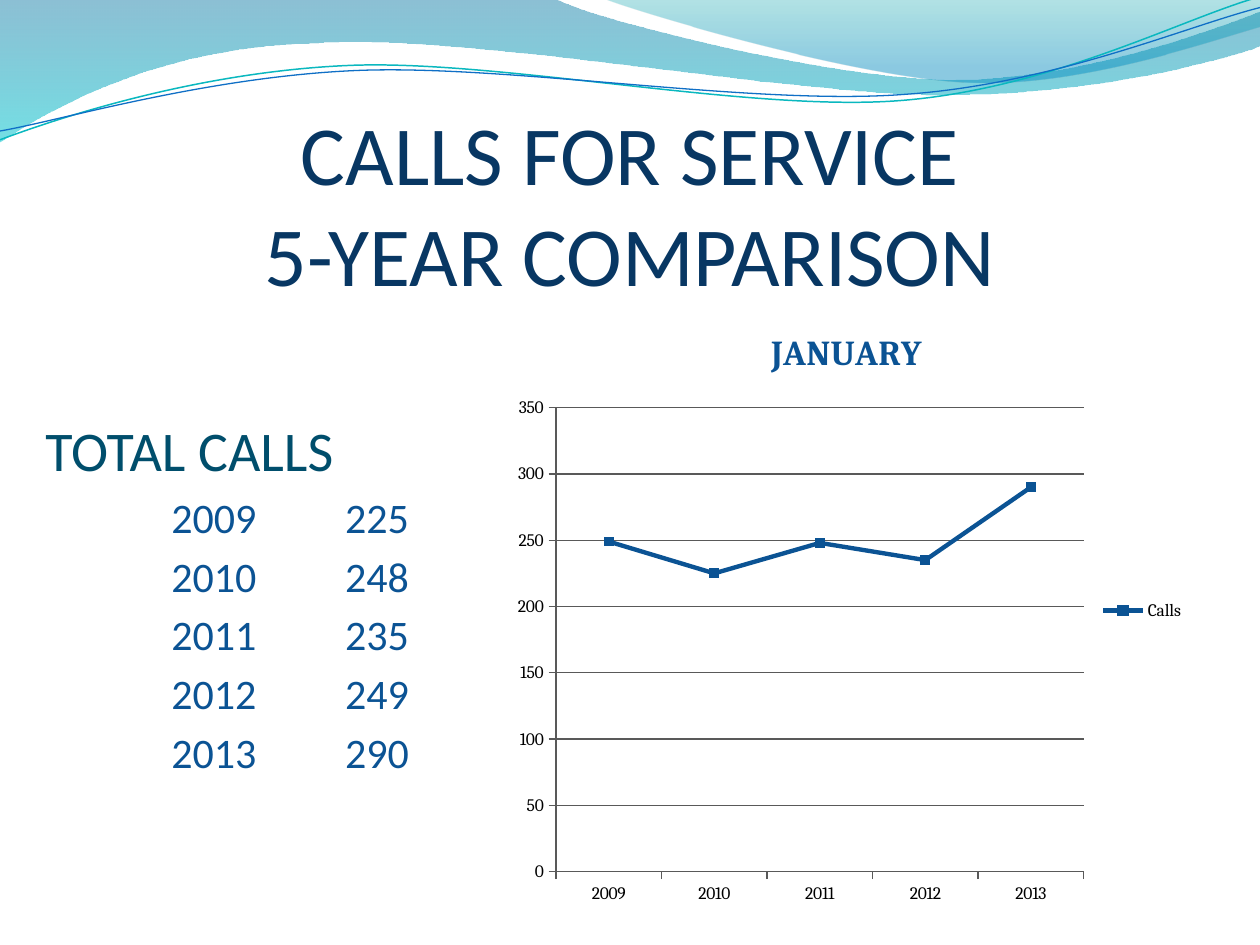
from lxml.etree import SubElement
from pptx import Presentation
from pptx.chart.data import CategoryChartData
from pptx.dml.color import RGBColor
from pptx.enum.chart import XL_CHART_TYPE, XL_LEGEND_POSITION, XL_MARKER_STYLE, XL_TICK_MARK
from pptx.enum.text import MSO_ANCHOR, MSO_AUTO_SIZE, PP_ALIGN
from pptx.oxml.ns import qn
from pptx.util import Inches, Pt

WIDTH, HEIGHT = 10, 7.5
NAVY, TEAL, BLUE, GRAY = "083763", "004E6C", "0B5394", "595959"
YEARS = ["2009", "2010", "2011", "2012", "2013"]
TOTALS = [225, 248, 235, 249, 290]
CHART_VALUES = [249, 225, 248, 235, 290]

BANDS = [
    ([[(0, 0)], [(4.4, -0.01)],
      [(4.76, 0.17), (6.64, 0.63), (7.58, 0.63)],
      [(8.53, 0.63), (9.58, 0.26), (10, 0.09)], [(10.01, 0.36)],
      [(9.83, 0.44), (8.7, 0.76), (7.46, 0.75)],
      [(6.22, 0.75), (3.82, 0.28), (2.57, 0.34)],
      [(1.29, 0.36), (0.46, 0.83), (-0.01, 1.13)]],
     [(0, "0074A1", 45), (1, "00C6CF", 55)]),
    ([[(4.79, -0.01)],
      [(5.09, 0.11), (6.82, 0.62), (7.69, 0.65)],
      [(8.56, 0.69), (9.61, 0.32), (10, 0.21)], [(10, 0)]],
     [(0, "00A1A9", 30), (0.8, "008BBF", 45)]),
]
RIBBONS = [
    ([[(0, 1.11)],
      [(0.48, 0.93), (1.58, 0.57), (2.77, 0.52)],
      [(3.95, 0.47), (5.93, 0.89), (7.13, 0.8)],
      [(8.33, 0.71), (9.38, 0.15), (9.98, -0.02)]], "0AB8BF", 0.85),
    ([[(0, 1.04)],
      [(0.47, 0.96), (1.64, 0.61), (2.83, 0.56)],
      [(4.03, 0.51), (5.97, 0.84), (7.17, 0.75)],
      [(8.36, 0.67), (9.41, 0.21), (10, 0.06)]], "0F6FC6", 0.75),
]


def color(value):
    """Turn a hex string into a colour."""
    return RGBColor.from_string(value)


def apply(target, values):
    """Set each attribute named in a dict of format values."""
    for name, value in values.items():
        setattr(target, name, value)


def format_font(font, size, value, name, bold=False):
    """Give a font its size, colour, face and weight."""
    apply(font, {"size": Pt(size), "name": name, "bold": bold})
    font.color.rgb = color(value)


def place(shape, box):
    """Move a shape to a box given in inches."""
    apply(shape, dict(zip(("left", "top", "width", "height"), map(Inches, box))))


def add_outline(slide, segments, close):
    """Draw a freeform whose three-point segments are cubic curves."""
    first, *rest = [tuple(map(Inches, segment[-1])) for segment in segments]
    builder = slide.shapes.build_freeform(*first, scale=1.0)
    builder.add_line_segments(rest, close=close)
    shape = builder.convert_to_shape()
    shape.shadow.inherit = False
    lines = list(shape._element.spPr.iter(qn("a:lnTo")))
    for line, segment in zip(lines, segments[1:]):
        if len(segment) == 3:
            curve = SubElement(line.getparent(), qn("a:cubicBezTo"))
            for x, y in segment:
                point = SubElement(curve, qn("a:pt"))
                point.set("x", str(Inches(x) - shape.left))
                point.set("y", str(Inches(y) - shape.top))
            line.getparent().replace(line, curve)
    return shape


def add_waves(slide):
    """Draw the translucent bands and thin ribbons along the top edge."""
    for segments, stops in BANDS:
        band = add_outline(slide, segments, True)
        band.fill.gradient()
        band.fill.gradient_angle = 270
        for stop, (position, value, _) in zip(band.fill.gradient_stops, stops):
            stop.position = position
            stop.color.rgb = color(value)
        for node, (_, _, alpha) in zip(band._element.spPr.iter(qn("a:srgbClr")), stops):
            SubElement(node, qn("a:alpha")).set("val", str(alpha * 1000))
        band.line.fill.background()
    for segments, value, width in RIBBONS:
        ribbon = add_outline(slide, segments, False)
        ribbon.fill.background()
        ribbon.line.color.rgb = color(value)
        ribbon.line.width = Pt(width)


def add_title(slide, box):
    """Fill the title placeholder with two centred lines."""
    title = slide.shapes.title
    place(title, box)
    frame = title.text_frame
    frame.text = "CALLS FOR SERVICE\v5-YEAR COMPARISON"
    apply(frame, {"vertical_anchor": MSO_ANCHOR.BOTTOM, "auto_size": MSO_AUTO_SIZE.NONE,
                  "word_wrap": True, "margin_left": 0, "margin_right": 0,
                  "margin_top": Inches(0.05), "margin_bottom": 0})
    paragraph = frame.paragraphs[0]
    paragraph.alignment = PP_ALIGN.CENTER
    for run in paragraph.runs:
        format_font(run.font, 48, NAVY, "Calibri")


def add_totals(slide, box):
    """List the yearly totals in tabbed columns under a heading."""
    frame = slide.shapes.add_textbox(*map(Inches, box)).text_frame
    apply(frame, {"word_wrap": True, "margin_left": Inches(0.53)})
    rows = [("TOTAL CALLS", 32, TEAL)]
    rows += [(f"\t{year}\t{total}", 24, BLUE) for year, total in zip(YEARS, TOTALS)]
    for index, (text, size, value) in enumerate(rows):
        paragraph = frame.add_paragraph() if index else frame.paragraphs[0]
        paragraph.space_before = Pt(4.8)
        run = paragraph.add_run()
        run.text = text
        format_font(run.font, size, value, "Calibri")
        tabs = SubElement(paragraph._p.get_or_add_pPr(), qn("a:tabLst"))
        for position in (1, 2.38):
            tab = SubElement(tabs, qn("a:tab"))
            tab.set("pos", str(Inches(position)))
            tab.set("algn", "l")


def add_calls_chart(slide, box):
    """Plot the January calls of each year as a line with markers."""
    data = CategoryChartData(number_format="0")
    data.categories = YEARS
    data.add_series("Calls", CHART_VALUES)
    chart = slide.shapes.add_chart(XL_CHART_TYPE.LINE_MARKERS, *map(Inches, box), data).chart
    format_font(chart.font, 10, "000000", "Cambria")
    apply(chart, {"has_title": True, "has_legend": True})
    chart.chart_title.text_frame.text = "JANUARY "
    format_font(chart.chart_title.text_frame.paragraphs[0].runs[0].font, 20, BLUE, "Cambria", True)
    apply(chart.legend, {"position": XL_LEGEND_POSITION.RIGHT, "include_in_layout": False})
    chart.plots[0].vary_by_categories = False
    chart.value_axis.has_major_gridlines = True
    for axis in (chart.category_axis, chart.value_axis):
        axis.major_tick_mark = XL_TICK_MARK.OUTSIDE
        axis.format.line.color.rgb = color(GRAY)
    chart.value_axis.major_gridlines.format.line.color.rgb = color(GRAY)
    series = chart.plots[0].series[0]
    series.smooth = False
    series.format.line.color.rgb = color(BLUE)
    series.format.line.width = Pt(2.5)
    apply(series.marker, {"style": XL_MARKER_STYLE.SQUARE, "size": 5})
    series.marker.format.fill.solid()
    series.marker.format.fill.fore_color.rgb = color(BLUE)
    series.marker.format.line.color.rgb = color(BLUE)


def main():
    """Build the slide and save it."""
    presentation = Presentation()
    apply(presentation, {"slide_width": Inches(WIDTH), "slide_height": Inches(HEIGHT)})
    slide = presentation.slides.add_slide(presentation.slide_layouts[5])
    add_waves(slide)
    add_title(slide, (0.05 * WIDTH, 1.16, 0.9 * WIDTH, 1.25))
    add_totals(slide, (-0.17, 3.25, 3.92, 4.07))
    add_calls_chart(slide, (0.4 * WIDTH, 2.42, 0.55 * WIDTH, 4.85))
    presentation.save("out.pptx")


if __name__ == "__main__":
    main()
